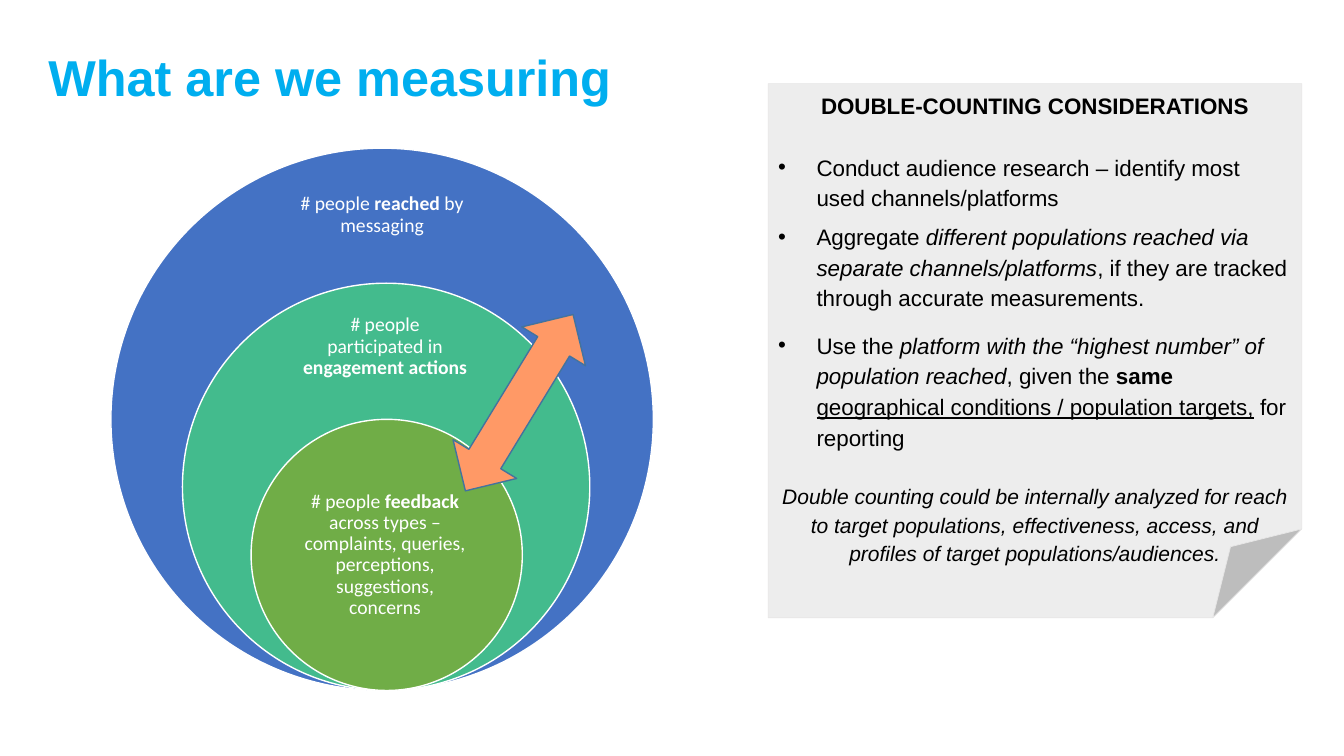
from lxml.etree import SubElement
from pptx import Presentation
from pptx.dml.color import RGBColor
from pptx.enum.shapes import MSO_SHAPE
from pptx.enum.text import MSO_ANCHOR, PP_ALIGN
from pptx.oxml.ns import qn
from pptx.util import Pt

PX = 9144  # EMU per px, 100 px to the inch

WHITE = RGBColor(0xFF, 0xFF, 0xFF)
BLACK = RGBColor(0x00, 0x00, 0x00)
TITLE_BLUE = RGBColor(0x00, 0xAE, 0xEF)
REACH_BLUE = RGBColor(0x44, 0x72, 0xC4)
ENGAGEMENT_TEAL = RGBColor(0x43, 0xBB, 0x8D)
FEEDBACK_GREEN = RGBColor(0x70, 0xAD, 0x47)
NOTE_GREY = RGBColor(0xED, 0xED, 0xED)
NOTE_EDGE = RGBColor(0xE7, 0xE6, 0xE6)
ARROW_ORANGE = RGBColor(0xFF, 0x99, 0x66)
ARROW_EDGE = RGBColor(0x43, 0x73, 0x9E)

CIRCLES_BOTTOM = 685
HANGING_INDENT = 38

# Each circle: centre x, diameter, fill, label box, label runs (text, style)
CIRCLES = [
    (379, 538, REACH_BLUE, (285, 173, 188, 81),
     [("# people ", ""), ("reached", "b"), (" by messaging", "")]),
    (383, 404, ENGAGEMENT_TEAL, (288, 306, 188, 76),
     [("# people participated in ", ""), ("engagement actions", "b")]),
    (383, 269, FEEDBACK_GREEN, (287, 483, 190, 135),
     [("# people ", ""), ("feedback ", "b"),
      ("across types – complaints, queries, perceptions, suggestions, concerns", "")]),
]

# Each bullet: space before, space after, runs (text, style)
BULLETS = [
    (0, 0, [("Conduct audience research – identify most used channels/platforms", "")]),
    (6, 6, [("Aggregate ", ""),
            ("different populations reached via separate channels/platforms", "i"),
            (", if they are tracked through accurate measurements.", "")]),
    (6, 6, [("Use the ", ""),
            ("platform with the “highest number” of population reached", "i"),
            (", given the ", ""), ("same ", "b"),
            ("geographical conditions / population targets,", "u"),
            (" for reporting", "")]),
]
CLOSING = ("Double counting could be internally analyzed for reach to target populations, "
           "effectiveness, access, and profiles of target populations/audiences.")


def box(left, top, width, height):
    return [value * PX for value in (left, top, width, height)]


def add_filled_shape(slide, kind, place, fill, line, line_width):
    shape = slide.shapes.add_shape(kind, *box(*place))
    shape.shadow.inherit = False
    shape.fill.solid()
    shape.fill.fore_color.rgb = fill
    shape.line.color.rgb = line
    shape.line.width = Pt(line_width)
    return shape


def write_runs(paragraph, runs, font_name, size, color, line_spacing,
               align=PP_ALIGN.LEFT, before=0, after=0):
    paragraph.alignment = align
    paragraph.line_spacing = line_spacing
    paragraph.space_before = Pt(before)
    paragraph.space_after = Pt(after)
    for text, style in runs:
        run = paragraph.add_run()
        run.text = text
        run.font.name = font_name
        run.font.size = Pt(size)
        run.font.color.rgb = color
        run.font.bold = "b" in style
        run.font.italic = "i" in style
        run.font.underline = "u" in style


def add_bullet(paragraph):
    properties = paragraph._p.get_or_add_pPr()
    properties.set("marL", str(HANGING_INDENT * PX))
    properties.set("indent", str(-HANGING_INDENT * PX))
    SubElement(properties, qn("a:buFont")).set("typeface", "Arial")
    SubElement(properties, qn("a:buChar")).set("char", "•")


def add_text_box(slide, place, margin, anchor):
    text_frame = slide.shapes.add_textbox(*box(*place)).text_frame
    text_frame.word_wrap = True
    text_frame.vertical_anchor = anchor
    text_frame.margin_left = text_frame.margin_right = margin * PX
    text_frame.margin_top = text_frame.margin_bottom = margin * PX
    return text_frame


def add_circle(slide, center, diameter, fill, label_place, runs):
    place = (center - diameter // 2, CIRCLES_BOTTOM - diameter, diameter, diameter)
    add_filled_shape(slide, MSO_SHAPE.OVAL, place, fill, WHITE, 1)
    label = add_text_box(slide, label_place, 11, MSO_ANCHOR.MIDDLE)
    write_runs(label.paragraphs[0], runs, "Calibri", 14, WHITE, 0.9, PP_ALIGN.CENTER)


def add_note(slide):
    note = add_filled_shape(slide, MSO_SHAPE.FOLDED_CORNER, (762, 83, 529, 530),
                            NOTE_GREY, NOTE_EDGE, 0.5)
    text_frame = note.text_frame
    text_frame.word_wrap = True
    text_frame.vertical_anchor = MSO_ANCHOR.TOP
    write_runs(text_frame.paragraphs[0], [("DOUBLE-COUNTING CONSIDERATIONS", "b")],
               "Arial", 16, BLACK, 1.14, PP_ALIGN.CENTER, after=22)
    for before, after, runs in BULLETS:
        paragraph = text_frame.add_paragraph()
        write_runs(paragraph, runs, "Arial", 16, BLACK, 1.14, before=before, after=after)
        add_bullet(paragraph)
    write_runs(text_frame.add_paragraph(), [(CLOSING, "i")],
               "Arial", 15, BLACK, 1.14, PP_ALIGN.CENTER, before=15)


def main():
    presentation = Presentation()
    presentation.slide_width = 1333 * PX
    presentation.slide_height = 750 * PX
    slide = presentation.slides.add_slide(presentation.slide_layouts[6])

    # Title
    title = add_text_box(slide, (48, 53, 1124, 59), 0, MSO_ANCHOR.TOP)
    write_runs(title.paragraphs[0], [("What are we measuring", "b")],
               "Arial", 36, TITLE_BLUE, 0.9)

    # Nested circles
    for circle in CIRCLES:
        add_circle(slide, *circle)

    # Folded note
    add_note(slide)

    # Arrow across the circles
    arrow = add_filled_shape(slide, MSO_SHAPE.UP_DOWN_ARROW, (478, 297, 74, 205),
                             ARROW_ORANGE, ARROW_EDGE, 1)
    arrow.rotation = 31.4

    presentation.save("out.pptx")


if __name__ == "__main__":
    main()
